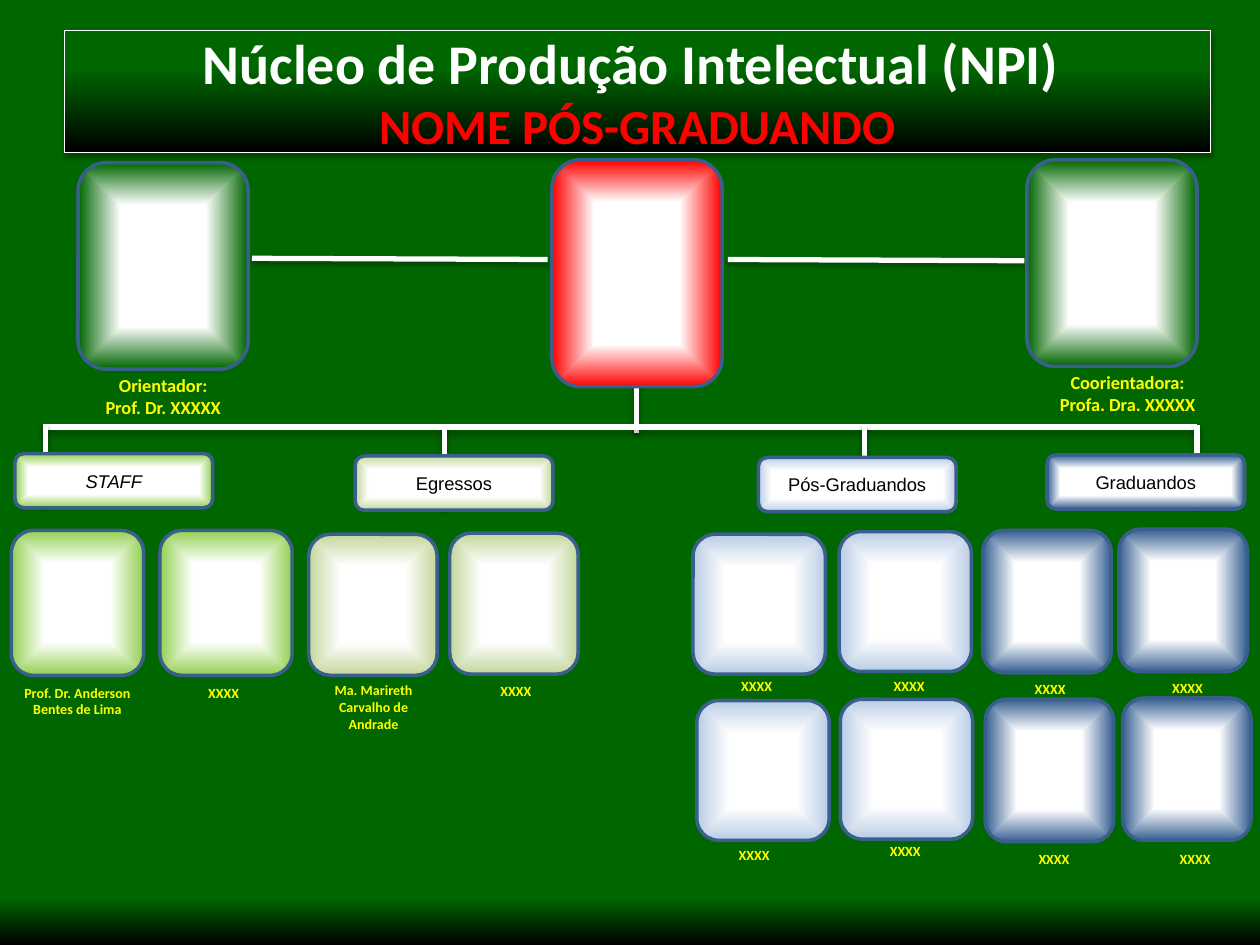
from lxml.etree import SubElement
from pptx import Presentation
from pptx.dml.color import RGBColor
from pptx.enum.shapes import MSO_CONNECTOR, MSO_SHAPE
from pptx.enum.text import MSO_ANCHOR, MSO_AUTO_SIZE, PP_ALIGN
from pptx.oxml.ns import qn
from pptx.util import Pt

COLORS = {
    "green": "006600", "black": "000000", "white": "FFFFFF", "red": "FF0000",
    "yellow": "FFFF00", "outline": "3A5F8C", "lime": "92D050",
    "olive": "C3D69B", "pale": "B9CDE5", "blue": "376092",
}

# Lines as x1, y1, x2, y2
SIDE_LINKS = [(144, 147.6, 313, 148.3), (416, 148.3, 585.4, 149)]
TRUNK = (363.6, 189.4, 363.6, 247.7)
BAR = (24.5, 244, 684, 244)
DROPS = [(26, 242.6), (254, 244.1), (494, 242.6), (684, 242.6)]
DROP_LENGTH = 46.8

# Colour and box of each leader
LEADERS = [
    ("green", (44.6, 92.9, 97.2, 118)),
    ("red", (315.4, 91.4, 97.2, 129.6)),
    ("green", (586.8, 91.4, 97.2, 118)),
]
LEADER_NAMES = [
    ("Orientador:\nProf. Dr. XXXXX", (-3.6, 210.2, 193.7, 32.4)),
    ("Coorientadora:\nProfa. Dra. XXXXX", (555.8, 208.8, 177.1, 45.4)),
]

HEADING_SIZE = (113, 31)
CAPTION_SIZE = (75.6, 17.3)

# Heading, its corner, colour, card size, then the corner of each member's card
# with the corner and text of its caption
GROUPS = [
    ("STAFF", (8.6, 259.2), "lime", (75.6, 82.8), [
        ((6.5, 303.1), (2.2, 387.4), "Prof. Dr. Anderson Bentes de Lima"),
        ((91.4, 303.1), (90, 387.4), "XXXX"),
    ]),
    ("Egressos", (203, 260.6), "olive", (73.4, 80.6), [
        ((176.4, 305.3), (175.7, 385.9), "Ma. Marireth Carvalho de Andrade"),
        ((257, 304.6), (257, 386.6), "XXXX"),
    ]),
    ("Pós-Graduandos", (433.4, 261.4), "pale", (75.6, 79.9), [
        ((396, 305.3), (394.6, 383.8), "XXXX"),
        ((479.5, 303.8), (481.7, 383.8), "XXXX"),
        ((398.2, 400.3), (393.1, 480.2), "XXXX"),
        ((480.2, 399.6), (479.5, 478.1), "XXXX"),
    ]),
    ("Graduandos", (598.3, 259.9), "blue", (73.4, 81.4), [
        ((561.6, 303.1), (562.3, 385.2), "XXXX"),
        ((639.4, 302.4), (640.8, 384.5), "XXXX"),
        ((563, 399.6), (564.5, 482.4), "XXXX"),
        ((641.5, 398.9), (645.1, 482.4), "XXXX"),
    ]),
]
# Captions of more than one line: width, height
LONG_CAPTIONS = {
    "Prof. Dr. Anderson Bentes de Lima": (84.2, 26.6),
    "Ma. Marireth Carvalho de Andrade": (75.6, 36),
}


def rgb(name):
    return RGBColor.from_string(COLORS[name])


def set_gradient(parent, stops, centred=False):
    """Swap the solid fill in parent for a top-down or a centred gradient."""
    solid = parent.find(qn("a:solidFill"))
    grad = parent.makeelement(qn("a:gradFill"), {"rotWithShape": "1"})
    parent.replace(solid, grad)
    gs_list = SubElement(grad, qn("a:gsLst"))
    for percent, name in stops:
        gs = SubElement(gs_list, qn("a:gs"), pos=str(percent * 1000))
        SubElement(gs, qn("a:srgbClr"), val=COLORS[name])
    if centred:
        rect = SubElement(grad, qn("a:path"), {"path": "rect"})
        SubElement(rect, qn("a:fillToRect"), {side: "50000" for side in "ltrb"})
    else:
        SubElement(grad, qn("a:lin"), ang="5400000", scaled="0")


def add_shadow(sp):
    effects = SubElement(sp._element.spPr, qn("a:effectLst"))
    shadow = SubElement(effects, qn("a:outerShdw"), blurRad=str(Pt(3.1)),
                        dist=str(Pt(1.8)), dir="5400000", rotWithShape="0")
    color = SubElement(shadow, qn("a:srgbClr"), val=COLORS["black"])
    SubElement(color, qn("a:alpha"), val="35000")


def format_text(p, size, color, font="Calibri", bold=True, italic=False):
    p.alignment = PP_ALIGN.CENTER
    f = p.font
    f.name, f.size, f.bold, f.italic = font, Pt(size), bold, italic
    f.color.rgb = rgb(color)


def set_title(slide):
    sp = slide.shapes.title
    sp.left, sp.top, sp.width, sp.height = Pt(36.7), Pt(17.3), Pt(655.2), Pt(69.8)
    sp.fill.solid()
    set_gradient(sp._element.spPr, [(0, "green"), (31, "green"), (100, "black")])
    sp.line.color.rgb = rgb("white")
    sp.line.width = Pt(0.75)
    add_shadow(sp)
    tf = sp.text_frame
    tf.text = "Núcleo de Produção Intelectual (NPI) \nNOME PÓS-GRADUANDO"
    tf.auto_size = MSO_AUTO_SIZE.NONE
    tf.vertical_anchor = MSO_ANCHOR.MIDDLE
    format_text(tf.paragraphs[0], 32, "white")
    format_text(tf.paragraphs[1], 28, "red")


def add_line(slide, x1, y1, x2, y2):
    line = slide.shapes.add_connector(
        MSO_CONNECTOR.STRAIGHT, Pt(x1), Pt(y1), Pt(x2), Pt(y2))
    line.line.color.rgb = rgb("white")
    line.line.width = Pt(3)
    add_shadow(line)


def add_card(slide, color, box):
    sp = slide.shapes.add_shape(MSO_SHAPE.ROUNDED_RECTANGLE, *map(Pt, box))
    sp.shadow.inherit = False
    sp.fill.solid()
    set_gradient(sp._element.spPr, [(50, "white"), (100, color)], centred=True)
    sp.line.color.rgb = rgb("outline")
    sp.line.width = Pt(2)
    return sp


def add_heading(slide, text, corner, color):
    tf = add_card(slide, color, corner + HEADING_SIZE).text_frame
    tf.text = text
    tf.vertical_anchor = MSO_ANCHOR.MIDDLE
    format_text(tf.paragraphs[0], 10.5, "black", "Arial", False, text == "STAFF")


def add_caption(slide, text, box, size):
    tf = slide.shapes.add_textbox(*map(Pt, box)).text_frame
    tf.word_wrap = True
    tf.auto_size = MSO_AUTO_SIZE.SHAPE_TO_FIT_TEXT
    tf.text = text
    for p in tf.paragraphs:
        format_text(p, size, "yellow")


def main():
    prs = Presentation()
    prs.slide_width, prs.slide_height = Pt(720), Pt(540)
    slide = prs.slides.add_slide(prs.slide_layouts[5])
    slide.background.fill.solid()
    set_gradient(slide._element.find(".//" + qn("p:bgPr")),
                 [(95, "green"), (100, "black")])
    set_title(slide)

    drops = [(x, y, x, y + DROP_LENGTH) for x, y in DROPS]
    for ends in SIDE_LINKS + [TRUNK, BAR] + drops:
        add_line(slide, *ends)
    for color, box in LEADERS:
        add_card(slide, color, box)
    for text, box in LEADER_NAMES:
        add_caption(slide, text, box, 10.5)

    for heading, corner, color, card_size, members in GROUPS:
        add_heading(slide, heading, corner, color)
        for card_corner, caption_corner, name in members:
            add_card(slide, color, card_corner + card_size)
            size = LONG_CAPTIONS.get(name, CAPTION_SIZE)
            add_caption(slide, name, caption_corner + size, 8)

    prs.save("out.pptx")


if __name__ == "__main__":
    main()
